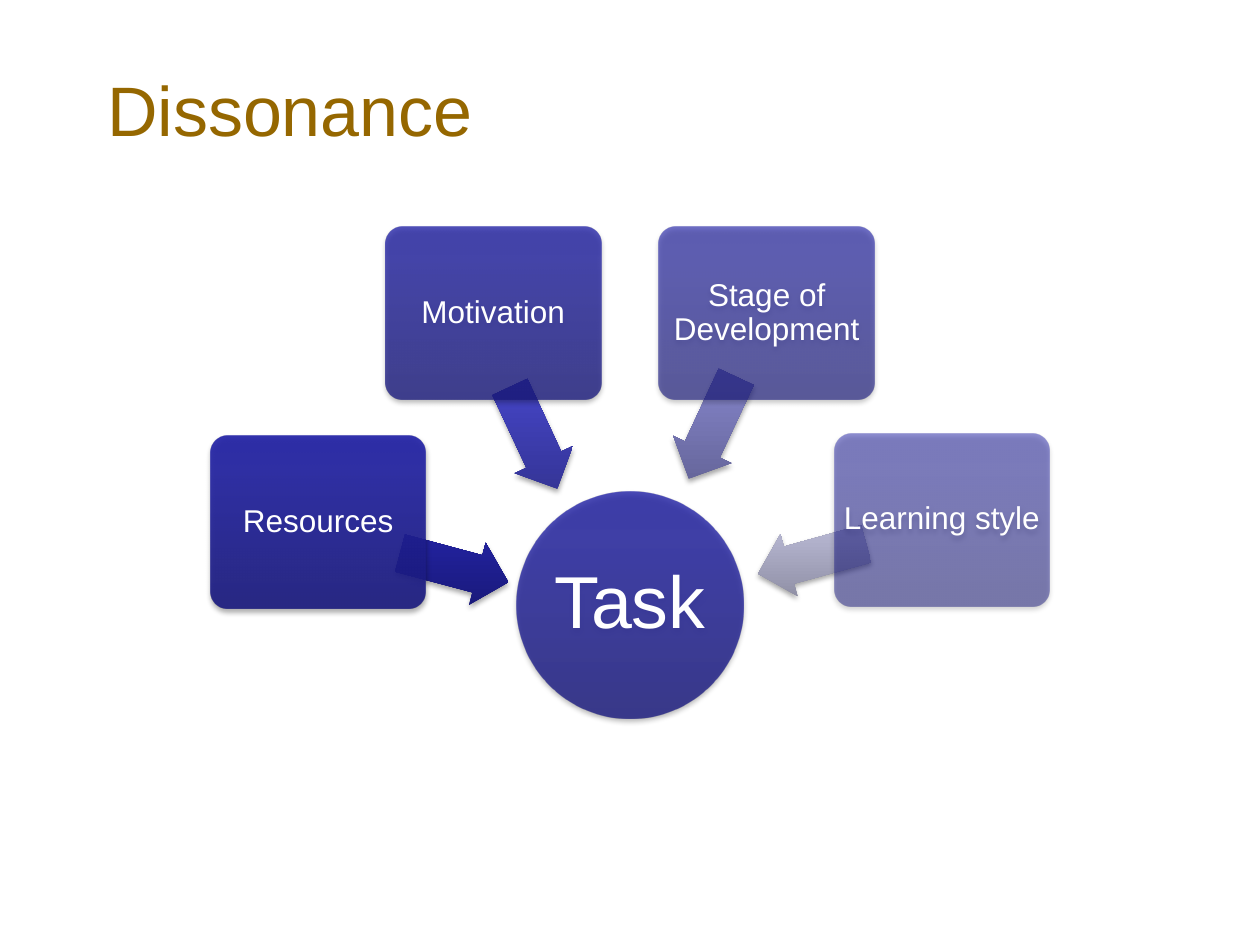
from dataclasses import dataclass

from lxml import etree
from pptx import Presentation
from pptx import util as u
from pptx.dml.color import RGBColor
from pptx.enum import shapes, text
from pptx.oxml import ns


@dataclass(frozen=True)
class Theme:
    font: str = "Arial"
    title: str = "956700"
    label: str = "FFFFFF"
    base: tuple = ("1B1B7E", "2323A3", "2020A6")
    shadow: str = "000000"
    title_size: int = 40
    hub_size: int = 42
    card_size: int = 18


THEME = Theme()
CARD_W, CARD_H = 1.71, 1.37
ARROW_W, ARROW_H = 0.89, 0.51

FACTORS = [
    ("Resources", (1.67, 3.46), 90, (3.16, 4.25), 195, ("191978", "21219C", "1F1F9F")),
    ("Motivation", (3.06, 1.8), 77, (3.79, 3.22), 245, ("333392", "4242BE", "4040C1")),
    ("Stage of Development", (5.23, 1.8), 63, (5.21, 3.14), 295, ("636396", "8080C3", "8080C5")),
    ("Learning style", (6.62, 3.44), 50, (6, 4.18), 344.5, ("8C8CA1", "B6B6D1", "B6B6D2")),
]


def add_node(parent, tag, **attrs):
    return etree.SubElement(parent, ns.qn(tag), {k: str(v) for k, v in attrs.items()})


def add_color(parent, color, opacity):
    node = add_node(parent, "a:srgbClr", val=color)
    if opacity < 100:
        add_node(node, "a:alpha", val=opacity * 1000)


def style_shape(s, colors, opacity=100):
    s.line.fill.background()
    s.fill.gradient()
    grad = s._element.spPr.find(ns.qn("a:gradFill"))
    for child in list(grad):
        grad.remove(child)
    grad.set("rotWithShape", "0")
    stops = add_node(grad, "a:gsLst")
    for pos, color in zip((0, 80, 100), colors):
        add_color(add_node(stops, "a:gs", pos=pos * 1000), color, opacity)
    add_node(grad, "a:lin", ang=270 * 60000, scaled=0)
    s.shadow.inherit = False
    effects = s._element.spPr.find(ns.qn("a:effectLst"))
    shadow = add_node(effects, "a:outerShdw", blurRad=u.Pt(3.1), dist=u.Pt(1.8),
                      dir=90 * 60000, rotWithShape=0)
    add_color(shadow, THEME.shadow, 35)


def format_runs(p, size, color):
    for r in p.runs:
        r.font.name = THEME.font
        r.font.size = u.Pt(size)
        r.font.color.rgb = RGBColor.from_string(color)


def add_shape(group, kind, box):
    return group.shapes.add_shape(kind, *map(u.Inches, box))


def add_label(s, label, size):
    tf = s.text_frame
    tf.word_wrap = True
    tf.vertical_anchor = text.MSO_ANCHOR.MIDDLE
    tf.margin_left = tf.margin_right = tf.margin_top = tf.margin_bottom = 0
    p = tf.paragraphs[0]
    p.text = label
    p.alignment = text.PP_ALIGN.CENTER
    p.line_spacing = 0.9
    format_runs(p, size, THEME.label)


def add_title(slide, label, box):
    s = slide.shapes.title
    s.left, s.top, s.width, s.height = map(u.Inches, box)
    tf = s.text_frame
    tf.text = label
    tf.vertical_anchor = text.MSO_ANCHOR.TOP
    tf.margin_top = u.Inches(0.11)
    p = tf.paragraphs[0]
    p.alignment = text.PP_ALIGN.LEFT
    format_runs(p, THEME.title_size, THEME.title)


def add_hub(group, label, box):
    s = add_shape(group, shapes.MSO_SHAPE.OVAL, box)
    style_shape(s, THEME.base, 80)
    add_label(s, label, THEME.hub_size)


def add_arrow(group, box, rotation, colors):
    s = add_shape(group, shapes.MSO_SHAPE.LEFT_ARROW, box)
    s.adjustments[0], s.adjustments[1] = 0.6, 0.5
    s.rotation = rotation
    style_shape(s, colors)


def add_card(group, label, box, opacity):
    s = add_shape(group, shapes.MSO_SHAPE.ROUNDED_RECTANGLE, box)
    s.adjustments[0] = 0.1
    style_shape(s, THEME.base, opacity)
    add_label(s, label, THEME.card_size)


def add_diagram(slide, hub_box):
    group = slide.shapes.add_group_shape()
    add_hub(group, "Task", hub_box)
    for label, card_at, opacity, arrow_at, rotation, colors in FACTORS:
        add_arrow(group, (*arrow_at, ARROW_W, ARROW_H), rotation, colors)
        add_card(group, label, (*card_at, CARD_W, CARD_H), opacity)


def main():
    prs = Presentation()
    prs.slide_width, prs.slide_height = u.Inches(10), u.Inches(7.5)
    slide = prs.slides.add_slide(prs.slide_layouts[5])
    add_title(slide, "Dissonance", (0.75, 0.42, 8.5, 1))
    add_diagram(slide, (4.1, 3.9, 1.8, 1.8))
    prs.save("out.pptx")


if __name__ == "__main__":
    main()
